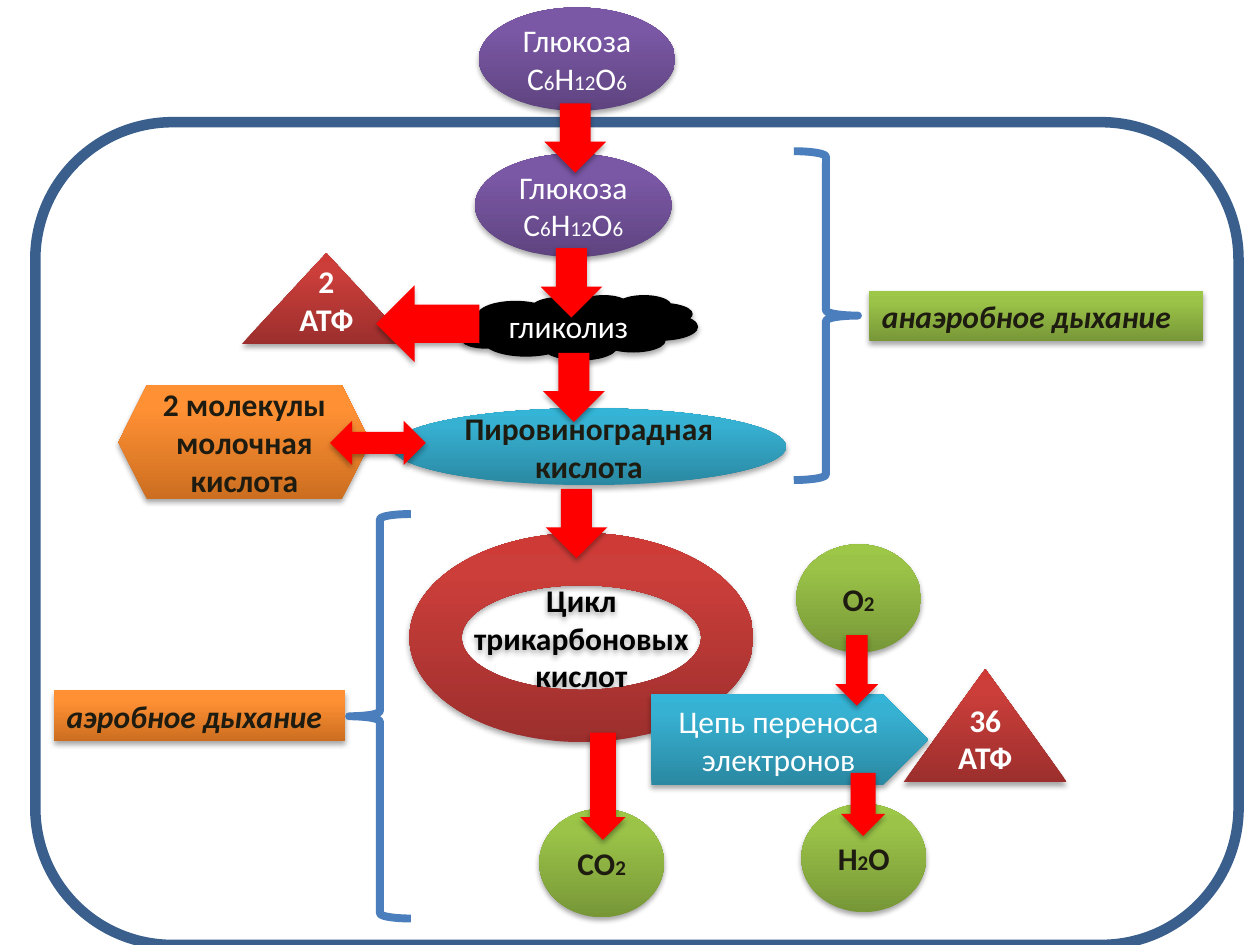
"""Build a slide showing the stages of anaerobic and aerobic respiration."""
import copy
import pptx
import pptx.dml.color
import pptx.enum.shapes
import pptx.enum.text
import pptx.oxml
import pptx.oxml.ns
import pptx.util

Inches, Pt = pptx.util.Inches, pptx.util.Pt
RGB = pptx.dml.color.RGBColor.from_string
Kind = pptx.enum.shapes.MSO_SHAPE
Align = pptx.enum.text.PP_ALIGN
Anchor = pptx.enum.text.MSO_ANCHOR

THEME = {
    "font": "Calibri", "size": 18, "small": 12,
    "white": "FFFFFF", "black": "000000", "dark": "1E1C11", "red": "FF0000",
    "frame": "3A5F8C", "brace": "4B7EBC",
    "green": ("779737", "9BC348", "9DC746"),
    "brick": ("9C2F2D", "CB3E3A", "CE3B37"),
    "violet": ("5F4480", "7B58A6", "7C57A8"),
    "teal": ("2A88A2", "37B1D2", "34B4D6"),
    "orange": ("CC6E20", "FF9034", "FF9136"),
}
SHADOW = (
    f'<a:outerShdw {pptx.oxml.ns.nsdecls("a")} blurRad="40000" dist="23000" dir="5400000" '
    'rotWithShape="0"><a:srgbClr val="000000"><a:alpha val="35000"/></a:srgbClr></a:outerShdw>'
)

deck = pptx.Presentation()
deck.slide_width, deck.slide_height = Inches(10), Inches(7.5)
slide = deck.slides.add_slide(deck.slide_layouts[6])


def write(shape, text, color="dark", bold=True, italic=False, align=Align.CENTER,
          anchor=Anchor.MIDDLE, wrap=True):
    """Write text in a shape, with the parts between underscores set small."""
    frame = shape.text_frame
    frame.word_wrap, frame.vertical_anchor = wrap, anchor
    line = frame.paragraphs[0]
    line.alignment = align
    for index, part in enumerate(text.split("_")):
        if part:
            run = line.add_run()
            run.text = part
            font = run.font
            font.name, font.bold, font.italic = THEME["font"], bold, italic
            font.size = Pt(THEME["small" if index % 2 else "size"])
            font.color.rgb = RGB(THEME[color])


def draw(kind, box, fill=None, line=None, width=0):
    """Draw a shape; filled ones cast a shadow."""
    shape = slide.shapes.add_shape(kind, *map(Inches, box))
    shape.shadow.inherit = False
    if line:
        shape.line.color.rgb, shape.line.width = RGB(THEME[line]), Pt(width)
    else:
        shape.line.fill.background()
    if not fill:
        shape.fill.background()
        return shape
    tone = THEME[fill]
    if isinstance(tone, str):
        shape.fill.solid()
        shape.fill.fore_color.rgb = RGB(tone)
    else:
        shape.fill.gradient()
        shape.fill.gradient_angle = 90
        stops = shape._element.spPr.find(".//" + pptx.oxml.ns.qn("a:gsLst"))
        stops.append(copy.deepcopy(stops[-1]))
        for stop, place, color in zip(shape.fill.gradient_stops, (0, 0.8, 1), tone):
            stop.position, stop.color.rgb = place, RGB(color)
    effects = shape._element.spPr.find(pptx.oxml.ns.qn("a:effectLst"))
    effects.append(pptx.oxml.parse_xml(SHADOW))
    return shape


draw(Kind.ROUNDED_RECTANGLE, (0.28, 0.97, 9.55, 6.53), line="frame", width=6)

sugar = "Глюкоза С_6_Н_12_О_6"
light = {"color": "white", "bold": False}
yield_ = {"color": "white", "anchor": Anchor.BOTTOM}
label = {"italic": True, "align": Align.LEFT, "anchor": Anchor.TOP}
nodes = [
    (Kind.OVAL, (4.28, 6.42, 0.99, 0.86), "green", "СО_2", {}),
    (Kind.ISOSCELES_TRIANGLE, (1.92, 2.01, 1.34, 0.72), "brick", "2 АТФ", yield_),
    (Kind.OVAL, (3.77, 1.22, 1.56, 0.82), "violet", sugar, light),
    (Kind.OVAL, (3.8, 0.06, 1.56, 0.82), "violet", sugar, light),
    (Kind.CLOUD, (3.62, 2.34, 1.92, 0.52), "black", "гликолиз", light),
    (Kind.OVAL, (3.11, 3.24, 3.13, 0.61), "teal", "Пировиноградная кислота", {}),
    (Kind.HEXAGON, (0.94, 3.06, 2, 0.9), "orange", "2 молекулы молочная кислота", {}),
    (Kind.DONUT, (3.25, 4.23, 2.73, 1.66), "brick", "Цикл трикарбоновых кислот",
     {"color": "black"}),
    (Kind.OVAL, (6.32, 4.32, 0.99, 0.86), "green", "О_2", {}),
    (Kind.OVAL, (6.36, 6.38, 0.99, 0.86), "green", "Н_2_О", {}),
    (Kind.ISOSCELES_TRIANGLE, (7.17, 5.31, 1.3, 0.9), "brick", "36 АТФ", yield_),
    (Kind.RECTANGLE, (6.9, 2.31, 2.65, 0.4), "green", "анаэробное дыхание", label),
    (Kind.RECTANGLE, (0.43, 5.48, 2.31, 0.4), "orange", "аэробное дыхание",
     {**label, "wrap": False}),
    (Kind.PENTAGON, (5.17, 5.51, 2.2, 0.72), "teal", "Цепь переноса электронов", light),
]
for kind, box, fill, text, form in nodes:
    write(draw(kind, box, fill), text, **form)

for kind, box in [(Kind.RIGHT_BRACE, (6.3, 1.2, 0.51, 2.61)),
                  (Kind.LEFT_BRACE, (2.77, 4.08, 0.49, 3.21))]:
    draw(kind, box, line="brace", width=4.5)

for left, top in [(4.32, 0.82), (4.29, 1.97), (4.31, 2.8), (4.33, 3.88)]:
    draw(Kind.DOWN_ARROW, (left, top, 0.49, 0.55), "red")

draw(Kind.LEFT_RIGHT_ARROW, (2.62, 3.34, 0.76, 0.35), "red")
draw(Kind.DOWN_ARROW, (3.09, 2.16, 0.61, 0.82), "red").rotation = 90
for box, shaft in [((4.36, 6.06, 0.85, 0.36), 0.57), ((6.52, 5.15, 0.56, 0.34), 0.5),
                   ((6.6, 6.21, 0.5, 0.35), 0.57)]:
    arrow = draw(Kind.RIGHT_ARROW, box, "red")
    arrow.rotation = 90
    arrow.adjustments[0] = shaft

deck.save("out.pptx")
